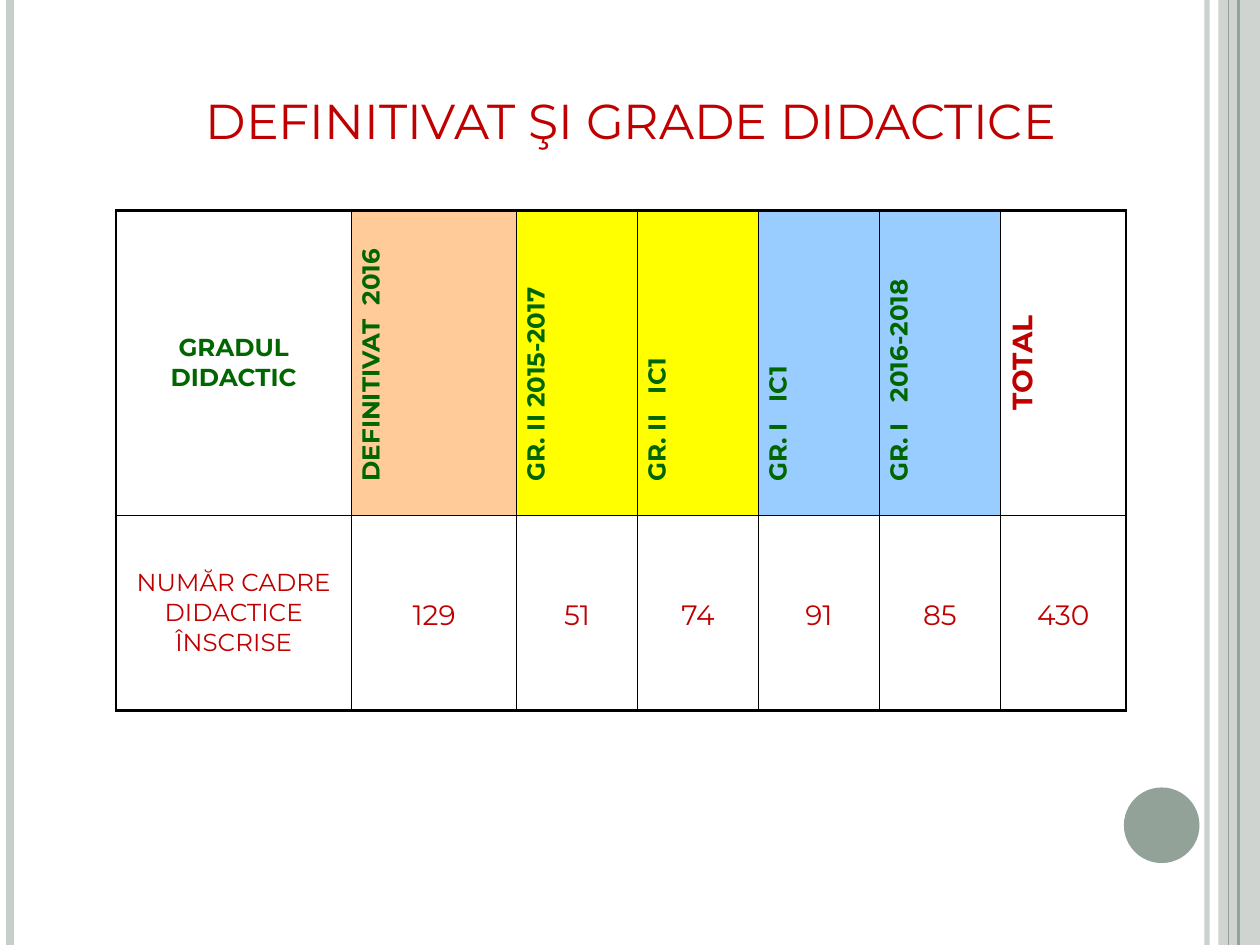
"""Build the slide on teachers enrolled for teaching degrees."""
import pptx
import pptx.dml.color
import pptx.enum.shapes
import pptx.enum.text
import pptx.oxml
import pptx.oxml.ns
import pptx.util
from pptx.util import Inches

COLORS = {
    "red": "C00000", "green": "006600", "black": "000000", "sage": "93A299",
    "mist": "C8CECA", "peach": "FFCC99", "yellow": "FFFF00", "sky": "99CCFF",
}
FONT = "Montserrat"
TITLE = "DEFINITIVAT ŞI GRADE DIDACTICE"
ROW_LABELS = ("GRADUL DIDACTIC", "NUMĂR CADRE DIDACTICE ÎNSCRISE")
DEGREES = [
    ("DEFINITIVAT  2016", "129", "peach", 1.31),
    ("GR. II 2015-2017", "51", "yellow", 0.96),
    ("GR. II   IC1", "74", "yellow", 0.96),
    ("GR. I   IC1", "91", "sky", 0.96),
    ("GR. I   2016-2018", "85", "sky", 0.96),
]
TOTAL = ("TOTAL", "430", None, 1)
LABEL_WIDTH = 1.87
ROW_HEIGHTS = (2.42, 1.55)
BARS = [
    (9.58, "mist", 3, 93),
    (0.08, "mist", 4.5, 100),
    (9.83, "sage", 1.5, 100),
    (9.75, "sage", 0.75, 100),
]
ALIGN = pptx.enum.text.PP_ALIGN
ANCHOR = pptx.enum.text.MSO_ANCHOR
SHAPE = pptx.enum.shapes.MSO_SHAPE


def rgb(name):
    """Return the palette colour of that name."""
    return pptx.dml.color.RGBColor.from_string(COLORS[name])


def set_alpha(properties, percent):
    """Set the opacity of the first solid colour below an element."""
    color = properties.find(".//" + pptx.oxml.ns.qn("a:srgbClr"))
    alpha = pptx.oxml.parse_xml(f'<a:alpha {pptx.oxml.ns.nsdecls("a")} val="{percent * 1000}"/>')
    color.append(alpha)


def write(frame, text, size=14, color="red", bold=False, align=ALIGN.CENTER,
          spacing=None, margin=0, indent=0):
    """Put one formatted paragraph in a text frame."""
    para = frame.paragraphs[0]
    para.alignment = align
    para.line_spacing = spacing
    properties = para._p.get_or_add_pPr()
    properties.set("marL", str(Inches(margin)))
    properties.set("indent", str(Inches(indent)))
    span = para.add_run()
    span.text = text
    span.font.name = FONT
    span.font.size = pptx.util.Pt(size)
    span.font.bold = bold
    span.font.color.rgb = rgb(color)


def add_bar(page, x, color, width, opacity):
    """Draw a vertical line over the full page height."""
    bar = page.shapes.add_connector(
        pptx.enum.shapes.MSO_CONNECTOR.STRAIGHT, Inches(x), 0, Inches(x), Inches(7.5))
    bar.line.color.rgb = rgb(color)
    bar.line.width = pptx.util.Pt(width)
    if opacity < 100:
        set_alpha(bar.line._ln, opacity)
    bar._element.spPr.append(pptx.oxml.parse_xml(f'<a:effectLst {pptx.oxml.ns.nsdecls("a")}/>'))


def add_block(page, kind, left, top, width, height, color):
    """Draw a filled shape without outline."""
    block = page.shapes.add_shape(kind, *map(Inches, (left, top, width, height)))
    block.shadow.inherit = False
    block.fill.solid()
    block.fill.fore_color.rgb = rgb(color)
    block.line.fill.background()
    return block


def style_cell(cell, fill, outer_sides):
    """Set margins, borders and fill; outer sides get the thicker border."""
    cell.vertical_anchor = ANCHOR.MIDDLE
    cell.margin_left = cell.margin_right = Inches(0.07)
    cell.margin_top = cell.margin_bottom = 0
    properties = cell._tc.get_or_add_tcPr()
    for side in "LRTB":
        width = pptx.util.Pt(1.5 if side in outer_sides else 1)
        properties.append(pptx.oxml.parse_xml(
            f'<a:ln{side} {pptx.oxml.ns.nsdecls("a")} w="{width}"><a:solidFill>'
            f'<a:srgbClr val="{COLORS["black"]}"/></a:solidFill></a:ln{side}>'))
    if fill:
        cell.fill.solid()
        cell.fill.fore_color.rgb = rgb(fill)
    else:
        cell.fill.background()


def add_degree_table(page):
    """Add the table of degrees and enrolled teachers."""
    columns = [(*ROW_LABELS, None, LABEL_WIDTH), *DEGREES, TOTAL]
    last = len(columns) - 1
    width = sum(column[3] for column in columns)
    table = page.shapes.add_table(
        2, len(columns), Inches(0.92), Inches(1.67),
        Inches(width), Inches(sum(ROW_HEIGHTS))).table
    table.first_row = table.horz_banding = False
    for row, height in zip(table.rows, ROW_HEIGHTS):
        row.height = Inches(height)
    for index, (heading, value, fill, width) in enumerate(columns):
        table.columns[index].width = Inches(width)
        sides = "L" if index == 0 else "R" if index == last else ""
        top, bottom = table.cell(0, index), table.cell(1, index)
        style_cell(top, fill, sides + "T")
        style_cell(bottom, None, sides + "B")
        if index == 0:
            write(top.text_frame, heading, color="green", bold=True)
            write(bottom.text_frame, value)
            continue
        top._tc.tcPr.set("vert", "vert270")
        if index == last:
            write(top.text_frame, heading, size=16, bold=True, spacing=1.15, indent=-0.05)
        else:
            write(top.text_frame, heading, color="green", bold=True,
                  align=ALIGN.LEFT, spacing=1.15, margin=0.2)
        write(bottom.text_frame, value, size=16, spacing=1.15)


def main():
    """Build and save the deck."""
    deck = pptx.Presentation()
    deck.slide_width, deck.slide_height = Inches(10), Inches(7.5)
    page = deck.slides.add_slide(deck.slide_layouts[5])
    band = add_block(page, SHAPE.RECTANGLE, 9.67, 0, 0.33, 7.5, "mist")
    set_alpha(band._element.spPr, 87)
    for bar in BARS:
        add_bar(page, *bar)
    add_block(page, SHAPE.OVAL, 8.92, 6.25, 0.6, 0.6, "sage")
    title = page.shapes.title
    title.left, title.top, title.width, title.height = map(Inches, (0.92, 0.67, 8.17, 0.57))
    title.text_frame.word_wrap = True
    title.text_frame.auto_size = pptx.enum.text.MSO_AUTO_SIZE.SHAPE_TO_FIT_TEXT
    title.text_frame.vertical_anchor = ANCHOR.TOP
    write(title.text_frame, TITLE, size=28)
    add_degree_table(page)
    deck.save("out.pptx")


if __name__ == "__main__":
    main()
